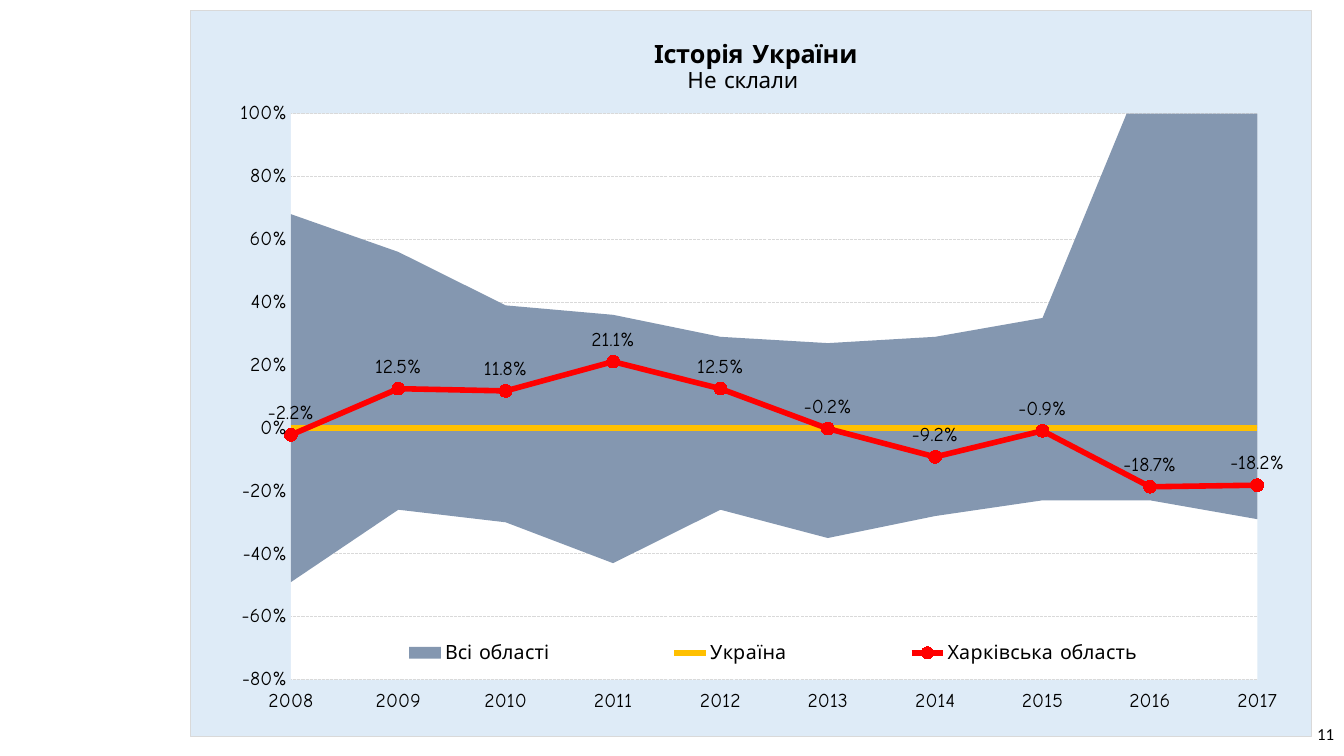
"""Build the slide with the regional range chart of history exam failures, 2008-2017."""
from pptx import Presentation
from pptx import util as u
from pptx.chart.data import CategoryChartData
from pptx.dml.color import RGBColor
from pptx.enum import chart as ch, dml, text
from pptx.oxml import parse_xml
from pptx.oxml.ns import nsdecls

BLACK = RGBColor(0x00, 0x00, 0x00)
RANGE_BLUE = RGBColor(0x84, 0x97, 0xB0)
COUNTRY_GOLD = RGBColor(0xFF, 0xC0, 0x00)
REGION_RED = RGBColor(0xFF, 0x00, 0x00)
PALE_BLUE = RGBColor(0xDE, 0xEB, 0xF7)
WHITE = RGBColor(0xFF, 0xFF, 0xFF)
GREY = RGBColor(0xD9, 0xD9, 0xD9)
FONT = "Comic Neue"


def place(parent, index, x, y, w=None, h=None, target=""):
    """Put a manual layout, in shares of the chart, at the given child index."""
    for old in parent.xpath("c:layout"):
        parent.remove(old)
    size = f'<c:w val="{w}"/><c:h val="{h}"/>' if w else ""
    parent.insert(index, parse_xml(
        f'<c:layout {nsdecls("c")}><c:manualLayout>{target}'
        '<c:xMode val="edge"/><c:yMode val="edge"/>'
        f'<c:x val="{x}"/><c:y val="{y}"/>{size}</c:manualLayout></c:layout>'))


def background(fill, outline):
    """Return chart area properties with a solid fill and the given outline."""
    return parse_xml(
        f'<c:spPr {nsdecls("c", "a")}><a:solidFill><a:srgbClr val="{fill}"/></a:solidFill>'
        f'<a:ln w="9525">{outline}</a:ln></c:spPr>')


deck = Presentation()
deck.slide_width, deck.slide_height = u.Inches(13.33), u.Inches(7.5)
slide = deck.slides.add_slide(deck.slide_layouts[6])

page_number = slide.shapes.add_textbox(u.Inches(10.33), u.Inches(7.08), u.Inches(3), u.Inches(0.4))
page_number.text_frame.word_wrap = True
page_number.text_frame.vertical_anchor = text.MSO_ANCHOR.MIDDLE
page_number.text_frame.text = "11"
number_line = page_number.text_frame.paragraphs[0]
number_line.alignment = text.PP_ALIGN.RIGHT
number_font = number_line.runs[0].font
number_font.size, number_font.name = u.Pt(12), "Calibri"
number_font.color.rgb = BLACK

results = CategoryChartData()
results.categories = [str(year) for year in range(2008, 2018)]
results.add_series("Всі області", (0.68, 0.56, 0.39, 0.36, 0.29, 0.27, 0.29, 0.35, 1.18, 1.43))
results.add_series("Series 2", (-0.49, -0.26, -0.3, -0.43, -0.26, -0.35, -0.28, -0.23, -0.23, -0.29))
results.add_series("Україна", [0] * 10)
results.add_series("Харківська область", (-0.022, 0.125, 0.118, 0.211, 0.125,
                                          -0.002, -0.092, -0.009, -0.187, -0.182))
history = slide.shapes.add_chart(ch.XL_CHART_TYPE.AREA, u.Inches(1.88), u.Inches(0.1),
                                 u.Inches(11.13), u.Inches(7.21), results).chart
history.font.size, history.font.name = u.Pt(14), FONT
history.font.color.rgb = BLACK

plot_area = history.element.xpath("c:chart/c:plotArea")[0]
areas = plot_area.xpath("c:areaChart")[0]
lines = parse_xml(f'<c:lineChart {nsdecls("c")}><c:grouping val="standard"/>'
                  '<c:varyColors val="0"/><c:marker val="1"/></c:lineChart>')
for position, series in enumerate(areas.xpath("c:ser")[2:], start=2):
    lines.insert(position, series)
for axis_id in areas.xpath("c:axId"):
    lines.append(parse_xml(f'<c:axId {nsdecls("c")} val="{axis_id.get("val")}"/>'))
areas.addnext(lines)

area_plot, line_plot = history.plots
area_plot.vary_by_categories = False
for boundary in area_plot.series:
    boundary.format.fill.solid()
    boundary.format.fill.fore_color.rgb = RANGE_BLUE
    boundary.format.line.fill.background()

country, region = line_plot.series
for trend, color in ((country, COUNTRY_GOLD), (region, REGION_RED)):
    trend.smooth = False
    trend.format.line.width = u.Pt(4)
    trend.format.line.color.rgb = color
country.marker.style = ch.XL_MARKER_STYLE.NONE
region.marker.style, region.marker.size = ch.XL_MARKER_STYLE.CIRCLE, 9
region.marker.format.fill.solid()
region.marker.format.fill.fore_color.rgb = REGION_RED
region.marker.format.line.color.rgb = REGION_RED

shares = region.data_labels
shares.show_value = True
shares.position = ch.XL_LABEL_POSITION.ABOVE
shares.number_format, shares.number_format_is_linked = "0.0%", False
shares.font.size, shares.font.name = u.Pt(14), FONT
shares.font.color.rgb = BLACK

years, percent = history.category_axis, history.value_axis
for axis in (years, percent):
    axis.major_tick_mark = axis.minor_tick_mark = ch.XL_TICK_MARK.NONE
    axis.tick_labels.font.size, axis.tick_labels.font.name = u.Pt(14), FONT
    axis.tick_labels.font.color.rgb = BLACK
years.tick_label_position = ch.XL_TICK_LABEL_POSITION.LOW
years.has_major_gridlines = False
years.format.line.color.rgb = GREY
years.format.line.width = u.Pt(1)
percent.minimum_scale, percent.maximum_scale, percent.major_unit = -0.8, 1, 0.2
percent.tick_labels.number_format = "0%"
percent.tick_labels.number_format_is_linked = False
percent.format.line.fill.background()
grid = percent.major_gridlines.format.line
grid.color.rgb, grid.width = GREY, u.Pt(0.75)
grid.dash_style = dml.MSO_LINE.SQUARE_DOT
for crossing in plot_area.xpath("c:valAx/c:crossBetween"):
    crossing.set("val", "midCat")

years.has_title = history.has_title = True
title_parts = history.element.xpath("c:chart/c:title") + plot_area.xpath("c:catAx/c:title")
for heading, part, wording, size, bold, x, y in (
        (history.chart_title, title_parts[0], "Історія України", 18, True, 0.41, 0.03),
        (years.axis_title, title_parts[1], "Не склали", 16, False, 0.44, 0.07)):
    heading.text_frame.text = wording
    heading_font = heading.text_frame.paragraphs[0].runs[0].font
    heading_font.size, heading_font.bold, heading_font.name = u.Pt(size), bold, FONT
    heading_font.color.rgb = BLACK
    place(part, 1, x, y)

history.has_legend = True
legend = history.legend
legend.position = ch.XL_LEGEND_POSITION.BOTTOM
legend.include_in_layout = True
legend.font.size, legend.font.name = u.Pt(14), FONT
legend.font.color.rgb = BLACK
legend_part = history.element.xpath("c:chart/c:legend")[0]
legend_part.insert(1, parse_xml(
    f'<c:legendEntry {nsdecls("c")}><c:idx val="1"/><c:delete val="1"/></c:legendEntry>'))
place(legend_part, 2, 0.09, 0.86, 0.86, 0.05)

place(plot_area, 0, 0.09, 0.142, 0.862, 0.78, '<c:layoutTarget val="inner"/>')
plot_area.append(background(WHITE, "<a:noFill/>"))
history.element.xpath("c:chart")[0].addnext(background(
    PALE_BLUE, f'<a:solidFill><a:srgbClr val="{GREY}"/></a:solidFill>'))

deck.save("out.pptx")
